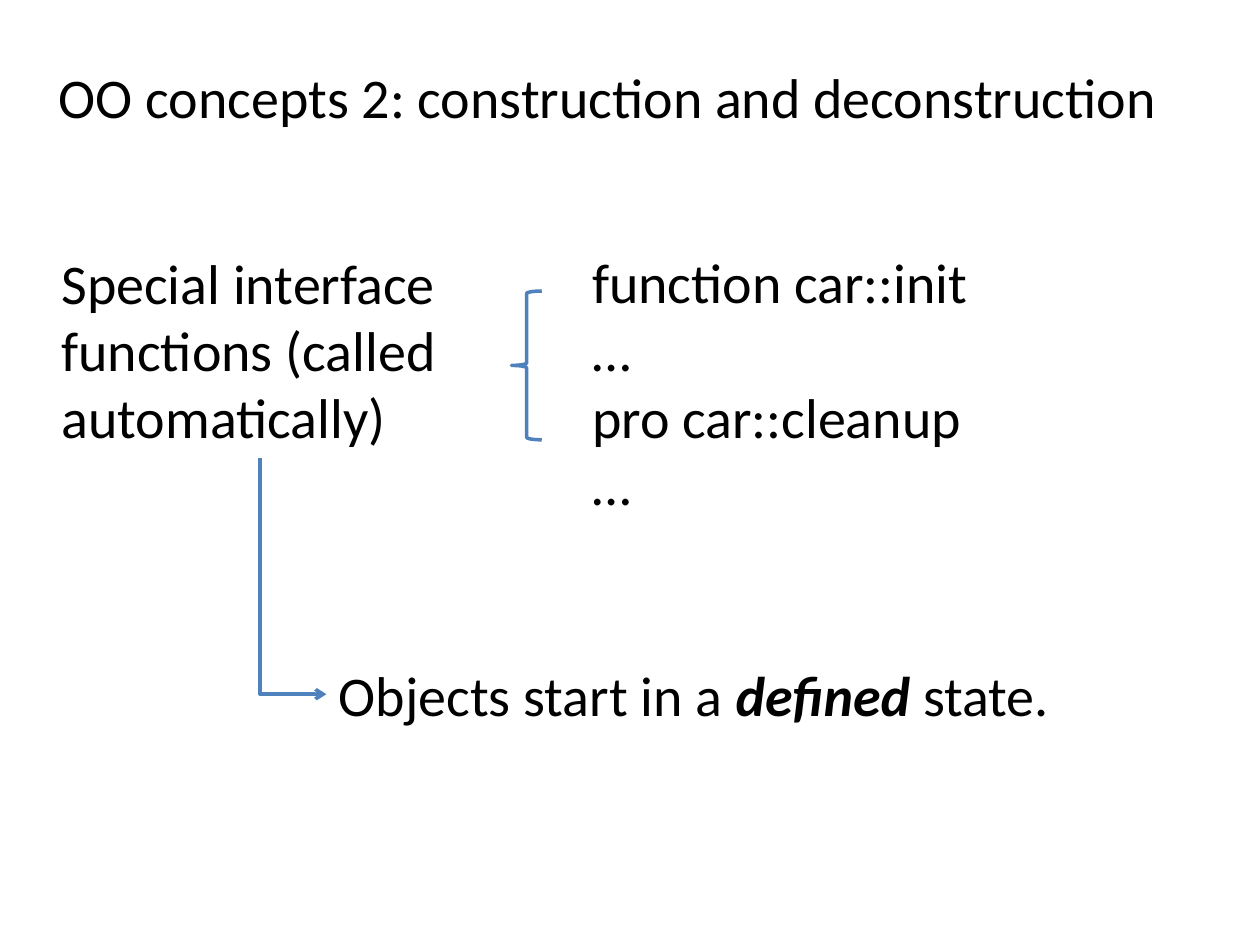
"""Build the slide on construction and deconstruction of objects."""
from dataclasses import dataclass

from lxml import etree
from pptx import Presentation
from pptx import util as u
from pptx.dml.color import RGBColor
from pptx.enum import shapes, text
from pptx.oxml import ns

COLORS = {"text": "000000", "accent": "4F81BD"}
FONT = {"name": "Calibri", "size": u.Pt(32)}


@dataclass(frozen=True)
class Box:
    left: float
    top: float
    width: float
    height: float

    def lengths(self) -> list:
        return [u.Pt(value) for value in (self.left, self.top, self.width, self.height)]


@dataclass(frozen=True)
class Run:
    text: str
    emphasis: bool = False


@dataclass(frozen=True)
class TextBlock:
    box: Box
    paragraphs: tuple
    wrap: bool = False


TITLE = Run("OO concepts 2: construction and deconstruction")
TITLE_BOX = Box(10.8, 10, 673.2, 90)
BRACE_BOX = Box(292.3, 166.3, 17.3, 85)
ARROW_START = (148.5, 262)
ARROW_END = (186.5, 396.7)
BLOCKS = (
    TextBlock(Box(331.2, 138.2, 231.8, 162.7),
              tuple((Run(line),) for line in ("function car::init", "…", "pro car::cleanup", "…"))),
    TextBlock(Box(28, 138.2, 241, 123.8),
              ((Run("Special interface functions (called automatically)"),),), wrap=True),
    TextBlock(Box(186.5, 373.7, 425.5, 46),
              ((Run("Objects start in a "), Run("defined", True), Run(" state.")),)),
)


def set_values(target, values: dict) -> None:
    for name, value in values.items():
        setattr(target, name, value)


def add_run(paragraph, run: Run) -> None:
    part = paragraph.add_run()
    part.text = run.text
    set_values(part.font, FONT | {"bold": run.emphasis, "italic": run.emphasis})
    part.font.color.rgb = RGBColor.from_string(COLORS["text"])


def format_title(title) -> None:
    places = zip(("left", "top", "width", "height"), TITLE_BOX.lengths())
    set_values(title, dict(places))
    set_values(title.text_frame, {"vertical_anchor": text.MSO_ANCHOR.MIDDLE, "word_wrap": True})
    paragraph = title.text_frame.paragraphs[0]
    paragraph.alignment = text.PP_ALIGN.CENTER
    add_run(paragraph, TITLE)


def add_text(slide, block: TextBlock) -> None:
    frame = slide.shapes.add_textbox(*block.box.lengths()).text_frame
    set_values(frame, {"word_wrap": block.wrap, "auto_size": text.MSO_AUTO_SIZE.SHAPE_TO_FIT_TEXT})
    for index, runs in enumerate(block.paragraphs):
        paragraph = frame.add_paragraph() if index else frame.paragraphs[0]
        for run in runs:
            add_run(paragraph, run)


def format_line(line) -> None:
    line.color.rgb = RGBColor.from_string(COLORS["accent"])
    line.width = u.Pt(2)


def add_brace(slide) -> None:
    brace = slide.shapes.add_shape(shapes.MSO_SHAPE.LEFT_BRACE, *BRACE_BOX.lengths())
    brace.shadow.inherit = False
    brace.fill.background()
    format_line(brace.line)


def add_corner_arrow(slide) -> None:
    (start_x, start_y), (end_x, end_y) = ARROW_START, ARROW_END
    center_x, center_y = (start_x + end_x) / 2, (start_y + end_y) / 2
    half_length, half_depth = (end_y - start_y) / 2, (end_x - start_x) / 2
    ends = (center_x + half_length, center_y - half_depth,
            center_x - half_length, center_y + half_depth)
    arrow = slide.shapes.add_connector(shapes.MSO_CONNECTOR.ELBOW, *map(u.Pt, ends))
    format_line(arrow.line)
    properties = arrow._element.spPr
    properties.find(ns.qn("a:xfrm")).set("rot", str(270 * 60000))
    properties.find(ns.qn("a:prstGeom")).set("prst", "bentConnector2")
    etree.SubElement(properties.find(ns.qn("a:ln")), ns.qn("a:tailEnd"), type="arrow")
    etree.SubElement(properties, ns.qn("a:effectLst"))


def main() -> None:
    presentation = Presentation()
    set_values(presentation, {"slide_width": u.Pt(720), "slide_height": u.Pt(540)})
    slide = presentation.slides.add_slide(presentation.slide_layouts[5])
    format_title(slide.shapes.title)
    add_brace(slide)
    for block in BLOCKS:
        add_text(slide, block)
    add_corner_arrow(slide)
    presentation.save("out.pptx")


if __name__ == "__main__":
    main()
